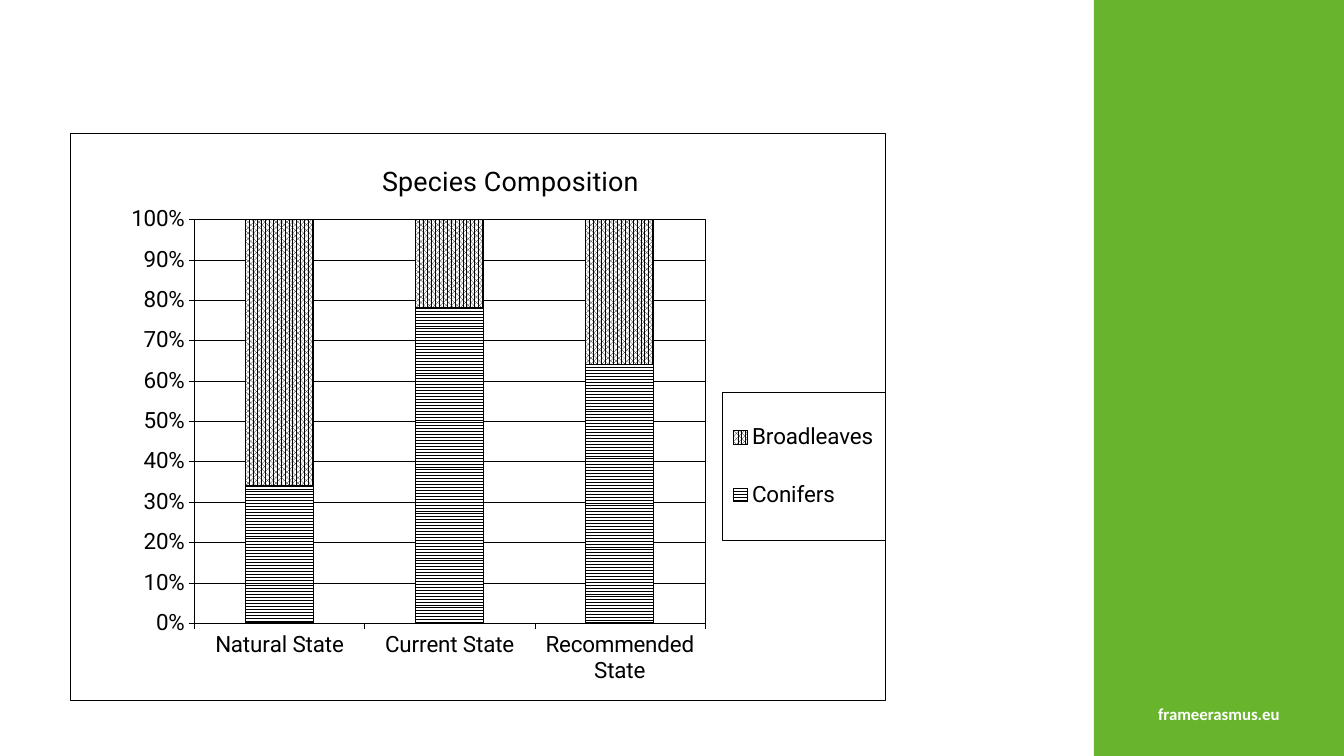
from lxml import etree
from pptx import Presentation
from pptx.chart.data import CategoryChartData
from pptx.dml.color import RGBColor
from pptx.enum import chart as charts, dml, shapes, text
from pptx.oxml import parse_xml
from pptx.oxml.ns import nsdecls, qn
from pptx.util import Inches, Pt


def color(hex_code):
    return RGBColor.from_string(hex_code)


def manual_layout(inner=False, **fractions):
    """Return a c:layout element placed by fractions of the chart's size."""
    layout = parse_xml(f"<c:layout {nsdecls('c')}/>")
    manual = etree.SubElement(layout, qn("c:manualLayout"))
    settings = {"layoutTarget": "inner"} if inner else {}
    settings |= {"xMode": "edge", "yMode": "edge"} | fractions
    for tag, value in settings.items():
        etree.SubElement(manual, qn(f"c:{tag}")).set("val", str(value))
    return layout


prs = Presentation()
prs.slide_width, prs.slide_height = Inches(13.33), Inches(7.5)
slide = prs.slides.add_slide(prs.slide_layouts[6])

# Green side band with the web address
band = slide.shapes.add_shape(shapes.MSO_SHAPE.RECTANGLE,
                              Inches(10.85), 0, Inches(2.48), Inches(7.5))
band.shadow.inherit = False
band.fill.solid()
band.fill.fore_color.rgb = color("69B42D")
band.line.fill.background()

address = slide.shapes.add_textbox(Inches(10.85), Inches(6.93), Inches(2.48), Inches(0.3))
address.text_frame.word_wrap = True
address_line = address.text_frame.paragraphs[0]
address_line.text = "frameerasmus.eu"
address_line.alignment = text.PP_ALIGN.CENTER
address_line.font.name = "Calibri"
address_line.font.size = Pt(12)
address_line.font.bold = True
address_line.font.color.rgb = color("FFFFFF")

# Species chart
species = CategoryChartData()
species.categories = ["Natural State", "Current State", "Recommended State"]
species.add_series("Conifers", [34, 78, 64])
species.add_series("Broadleaves", [66, 22, 36])
chart = slide.shapes.add_chart(charts.XL_CHART_TYPE.COLUMN_STACKED_100,
                               Inches(0.69), Inches(1.32), Inches(8.09), Inches(5.63),
                               species).chart
chart.font.name = "Roboto"
chart.font.size = Pt(16)
chart.font.color.rgb = color("000000")

chart.has_title = True
chart.chart_title.include_in_layout = False
title = chart.chart_title.text_frame.paragraphs[0]
title.text = "Species Composition"
title.font.name = "Roboto"
title.font.size = Pt(19.2)
title.font.bold = False
title.font.color.rgb = color("000000")

columns = chart.plots[0]
columns.gap_width = 150
columns.overlap = 100
columns.vary_by_categories = False
patterns = [dml.MSO_PATTERN.ZIG_ZAG, dml.MSO_PATTERN.PERCENT_75]
for series, pattern in zip(columns.series, patterns):
    fill = series.format.fill
    fill.patterned()
    fill.pattern = pattern
    fill.fore_color.rgb = color("000000")
    fill.back_color.rgb = color("FFFFFF")
    series.format.line.color.rgb = color("000000")
    series.format.line.width = Pt(1)

percent = chart.value_axis
percent.major_unit = 0.1
percent.has_major_gridlines = True
percent.tick_labels.number_format = "0%"
percent.tick_labels.number_format_is_linked = False
for axis in (chart.category_axis, percent):
    axis.major_tick_mark = charts.XL_TICK_MARK.OUTSIDE
for ruled in (chart.category_axis, percent, percent.major_gridlines):
    ruled.format.line.color.rgb = color("000000")
    ruled.format.line.width = Pt(0.25)

chart.has_legend = True
chart.legend.position = charts.XL_LEGEND_POSITION.RIGHT
chart.legend.include_in_layout = False

# Manual layouts and thin frames
chart_xml = chart.element.find(qn("c:chart"))
title_xml, plot_xml, legend_xml = (
    chart_xml.find(qn(f"c:{tag}")) for tag in ("title", "plotArea", "legend"))
for part in (title_xml, plot_xml, legend_xml):
    for layout in part.findall(qn("c:layout")):
        part.remove(layout)
title_xml.find(qn("c:tx")).addnext(manual_layout(x=0.377, y=0.045))
plot_xml.insert(0, manual_layout(inner=True, x=0.153, y=0.152, w=0.626, h=0.712))
legend_xml.find(qn("c:legendPos")).addnext(manual_layout(x=0.8, y=0.457, w=0.2, h=0.26))

for before in (chart_xml, plot_xml[-1], legend_xml.find(qn("c:overlay"))):
    before.addnext(parse_xml(
        f'<c:spPr {nsdecls("c", "a")}>'
        '<a:solidFill><a:srgbClr val="FFFFFF"/></a:solidFill>'
        '<a:ln w="3175"><a:solidFill><a:srgbClr val="000000"/></a:solidFill></a:ln>'
        '</c:spPr>'))

prs.save("out.pptx")
